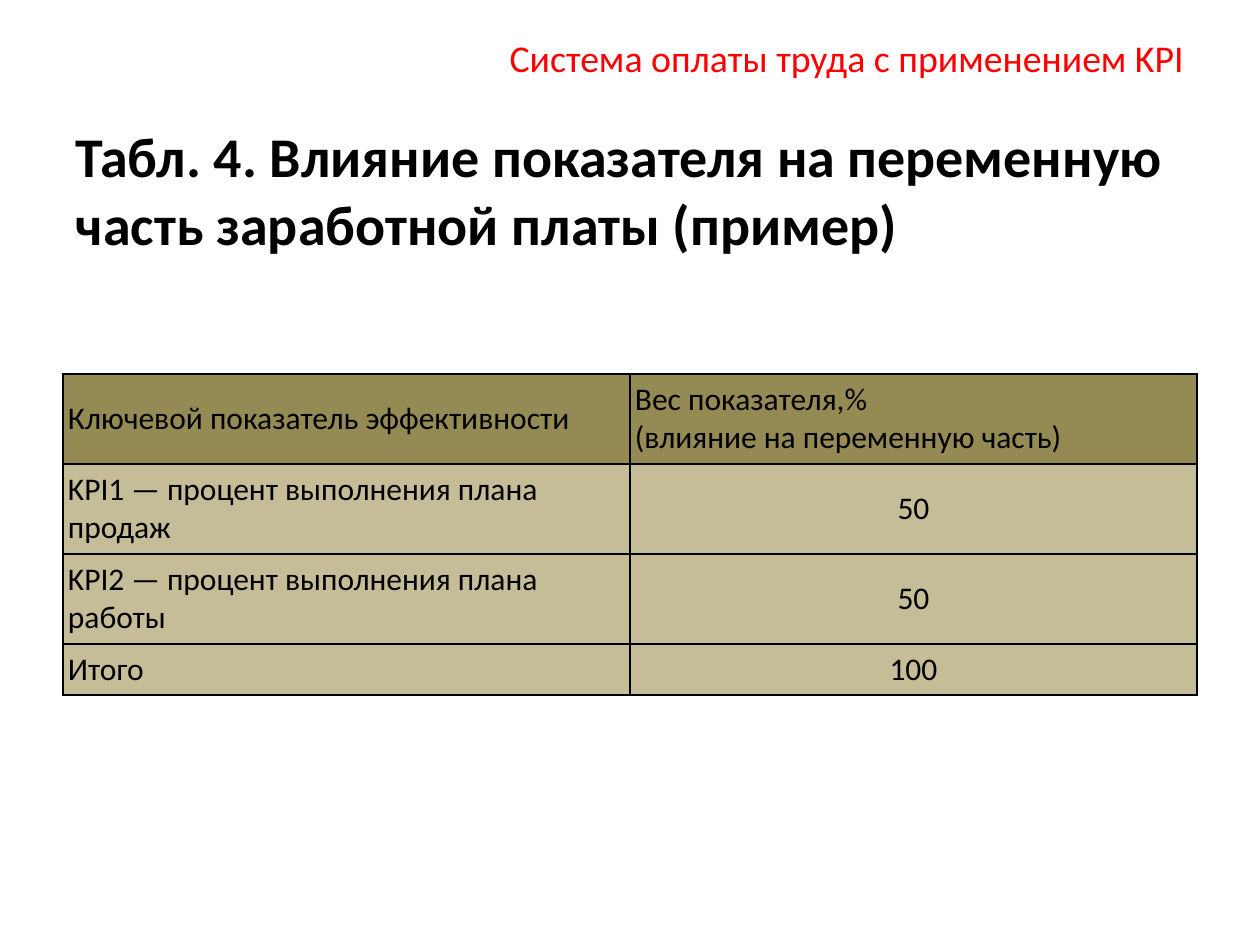
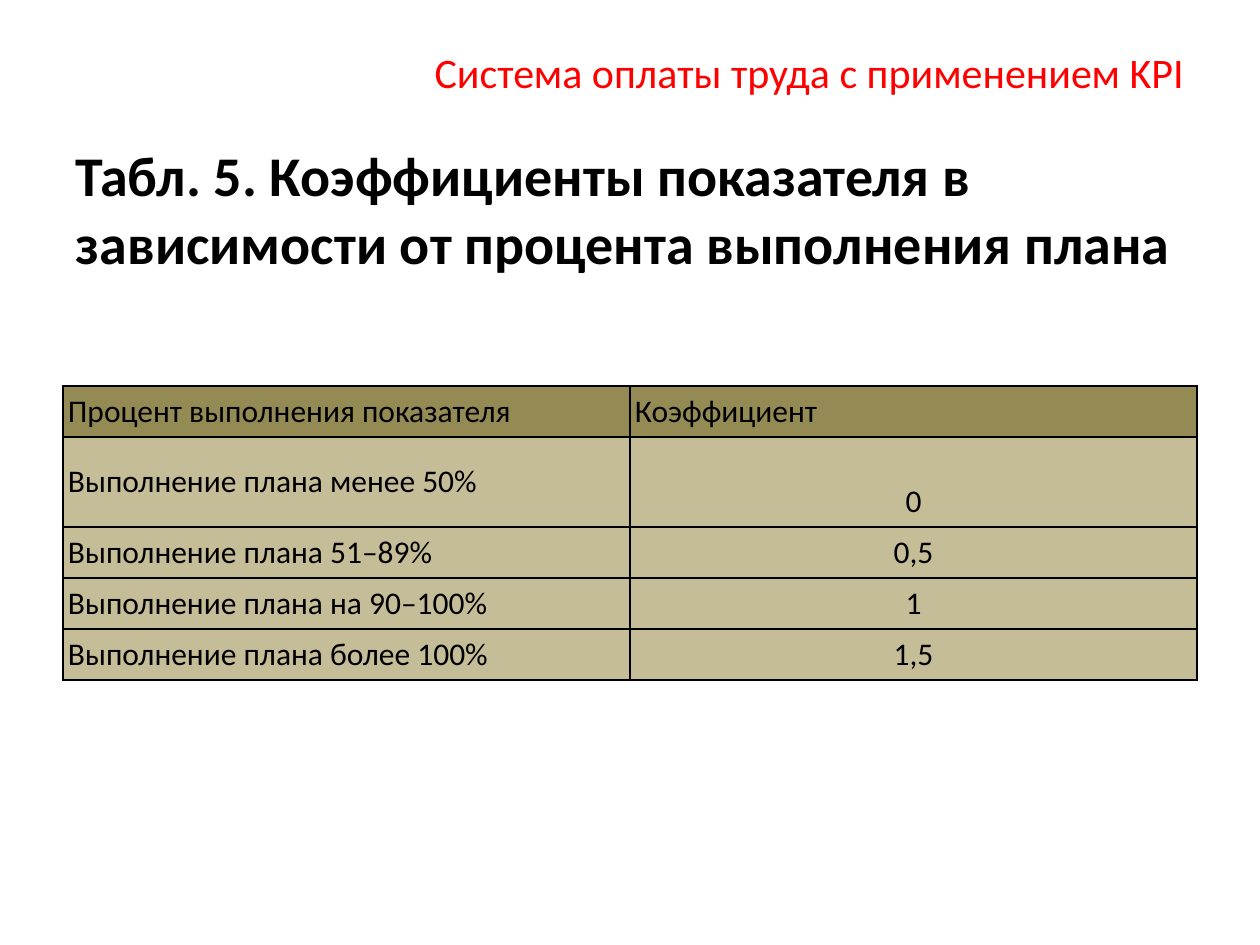
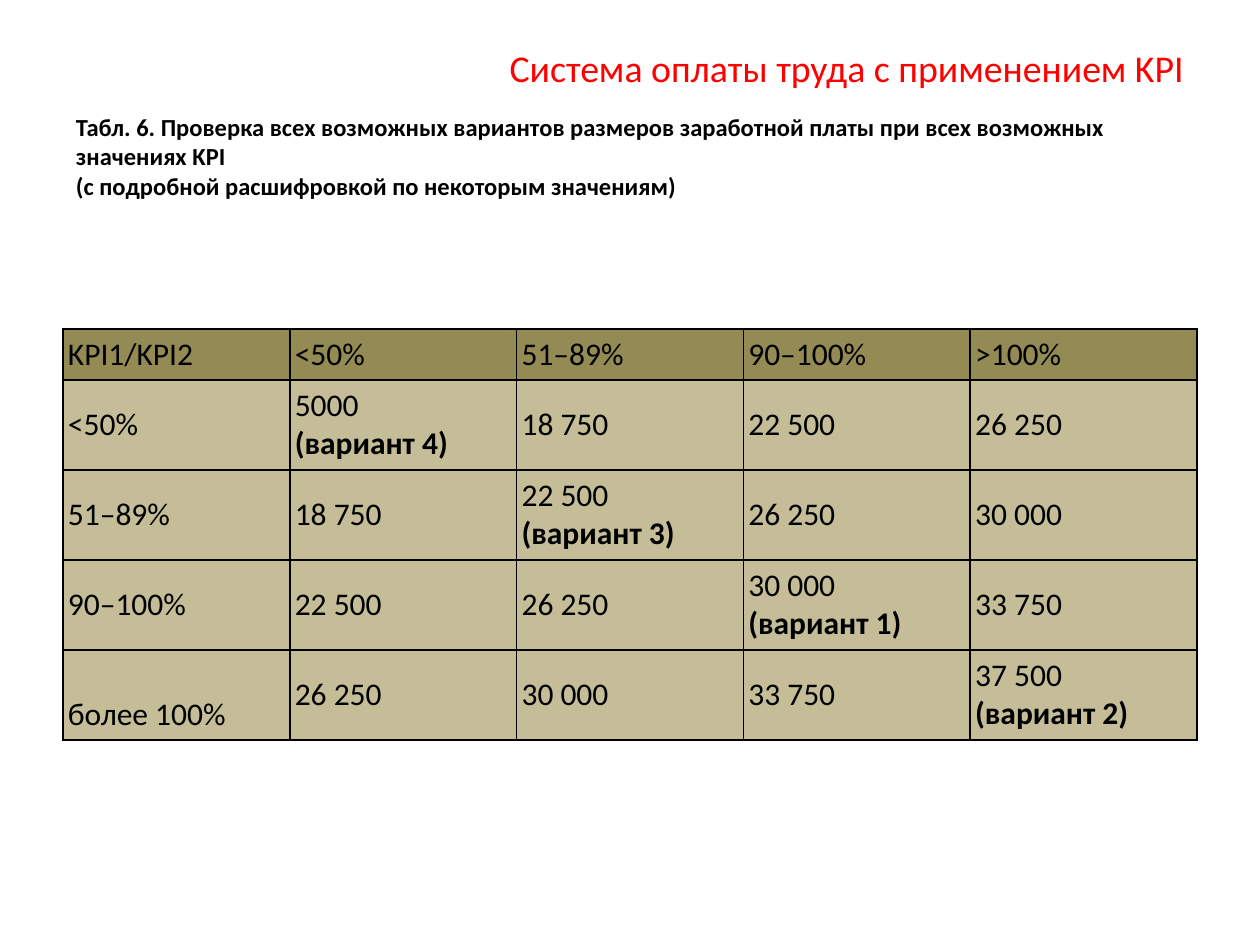
from dataclasses import dataclass

from lxml import etree
from pptx import Presentation
from pptx.dml.color import RGBColor
from pptx.enum.text import MSO_ANCHOR, PP_ALIGN
from pptx.oxml.ns import qn
from pptx.util import Emu, Pt

PAGE_WIDTH, PAGE_HEIGHT = 1260, 945
LEFT, WIDTH = 63, 1134
TITLE_TOP, BODY_BOTTOM = 38, 844
ROW, TALL_ROW = 51, 90
PAD_X, PAD_Y = 5, 6
INSET_X, INSET_Y = 13, 6
LINE_WIDTH = Pt(1)
FONT = "Calibri"
CELL_SIZE = 18
BLACK = RGBColor(0x00, 0x00, 0x00)
RED = RGBColor(0xFF, 0x00, 0x00)
OLIVE = RGBColor(0x94, 0x8A, 0x54)
SAND = RGBColor(0xC4, 0xBD, 0x97)
ALIGN_LEFT, ALIGN_CENTER, ALIGN_RIGHT = PP_ALIGN.LEFT, PP_ALIGN.CENTER, PP_ALIGN.RIGHT
TOP, MIDDLE, BOTTOM = MSO_ANCHOR.TOP, MSO_ANCHOR.MIDDLE, MSO_ANCHOR.BOTTOM
HEADING = "Система оплаты труда с применением KPI"


@dataclass
class TablePage:
    """Content and measures of one table slide."""

    title_size: float
    title_height: int
    caption: str
    caption_size: int
    caption_top: int
    table_top: int
    row_heights: list
    rows: list
    value_align: PP_ALIGN
    low_cell: tuple = ()


PAGES = [
    TablePage(
        21.6, 38, "Табл. 4. Влияние показателя на переменную часть заработной платы (пример)",
        32, 116, 374, [TALL_ROW] * 3 + [ROW],
        [
            ["Ключевой показатель эффективности", "Вес показателя,%\n(влияние на переменную часть)"],
            ["KPI1 — процент выполнения плана продаж", "50"],
            ["KPI2 — процент выполнения плана работы", "50"],
            ["Итого", "100"],
        ],
        ALIGN_CENTER,
    ),
    TablePage(
        24, 68, "Табл. 5. Коэффициенты показателя в зависимости от процента выполнения плана",
        32, 135, 386, [ROW, TALL_ROW] + [ROW] * 3,
        [
            ["Процент выполнения показателя", "Коэффициент"],
            ["Выполнение плана менее 50%", "0"],
            ["Выполнение плана 51–89%", "0,5"],
            ["Выполнение плана на 90–100%", "1"],
            ["Выполнение плана более 100%", "1,5"],
        ],
        ALIGN_CENTER, (1, 1),
    ),
    TablePage(
        21.6, 58,
        "Табл. 6. Проверка всех возможных вариантов размеров заработной платы при всех "
        "возможных значениях KPI\n(с подробной расшифровкой по некоторым значениям)",
        14, 106, 329, [ROW] + [TALL_ROW] * 4,
        [
            ["KPI1/KPI2", "<50%", "51–89%", "90–100%", ">100%"],
            ["<50%", ("5000", "(вариант 4)"), "18 750", "22 500", "26 250"],
            ["51–89%", "18 750", ("22 500", "(вариант 3)"), "26 250", "30 000"],
            ["90–100%", "22 500", "26 250", ("30 000", "(вариант 1)"), "33 750"],
            ["более 100%", "26 250", "30 000", "33 750", ("37 500", "(вариант 2)")],
        ],
        ALIGN_LEFT, (4, 0),
    ),
]


def px(length):
    """Turn pixels into EMU."""
    return Emu(round(length * 914400 / 126))


def style_paragraph(para, size, color, align, bold=False):
    """Set the alignment and font of a paragraph."""
    para.alignment = align
    para.font.name = FONT
    para.font.size = Pt(size)
    para.font.bold = bold
    para.font.color.rgb = color


def add_text(page, box, text, size, color, align, anchor, bold=False):
    """Place one wrapped paragraph in a box."""
    frame = page.shapes.add_textbox(*map(px, box)).text_frame
    frame.word_wrap = True
    frame.vertical_anchor = anchor
    frame.margin_left = frame.margin_right = px(INSET_X)
    frame.margin_top = frame.margin_bottom = px(INSET_Y)
    para = frame.paragraphs[0]
    para.text = text
    style_paragraph(para, size, color, align, bold)


def add_borders(cell):
    """Draw a black line on every side of a cell."""
    properties = cell._tc.get_or_add_tcPr()
    for side in ("a:lnL", "a:lnR", "a:lnT", "a:lnB"):
        line = etree.SubElement(properties, qn(side), w=str(LINE_WIDTH))
        fill = etree.SubElement(line, qn("a:solidFill"))
        etree.SubElement(fill, qn("a:srgbClr"), val=str(BLACK))


def fill_cell(cell, content, fill, align, anchor):
    """Write a value, with an optional bold note under it, into a cell."""
    add_borders(cell)
    cell.fill.solid()
    cell.fill.fore_color.rgb = fill
    cell.vertical_anchor = anchor
    cell.margin_left = cell.margin_right = px(PAD_X)
    cell.margin_top = cell.margin_bottom = px(PAD_Y)
    para = cell.text_frame.paragraphs[0]
    value, note = content if isinstance(content, tuple) else (content, None)
    para.text = value
    if note:
        para.add_line_break()
        span = para.add_run()
        span.text = note
        span.font.bold = True
    style_paragraph(para, CELL_SIZE, BLACK, align)


def add_grid(page, box, content):
    """Build the bordered table with equal columns in a box."""
    column_count = len(content.rows[0])
    table = page.shapes.add_table(len(content.rows), column_count, *map(px, box)).table
    table.first_row = table.horz_banding = False
    for column in table.columns:
        column.width = px(box[2] / column_count)
    for row_index, values in enumerate(content.rows):
        table.rows[row_index].height = px(content.row_heights[row_index])
        for column_index, value in enumerate(values):
            is_value = row_index > 0 and column_index > 0
            is_low = (row_index, column_index) == content.low_cell
            fill_cell(
                table.cell(row_index, column_index), value,
                SAND if row_index else OLIVE,
                content.value_align if is_value else ALIGN_LEFT,
                BOTTOM if is_low else MIDDLE,
            )


def add_table_page(deck, content):
    """Add a slide with the shared heading, a caption and a table."""
    page = deck.slides.add_slide(deck.slide_layouts[6])
    title_box = (LEFT, TITLE_TOP, WIDTH, content.title_height)
    add_text(page, title_box, HEADING, content.title_size, RED, ALIGN_RIGHT, MIDDLE)
    caption_box = (LEFT, content.caption_top, WIDTH, BODY_BOTTOM - content.caption_top)
    add_text(page, caption_box, content.caption, content.caption_size, BLACK, ALIGN_LEFT, TOP, True)
    add_grid(page, (LEFT, content.table_top, WIDTH, sum(content.row_heights)), content)


def main():
    """Build and save the deck."""
    deck = Presentation()
    deck.slide_width, deck.slide_height = px(PAGE_WIDTH), px(PAGE_HEIGHT)
    for content in PAGES:
        add_table_page(deck, content)
    deck.save("out.pptx")


if __name__ == "__main__":
    main()
